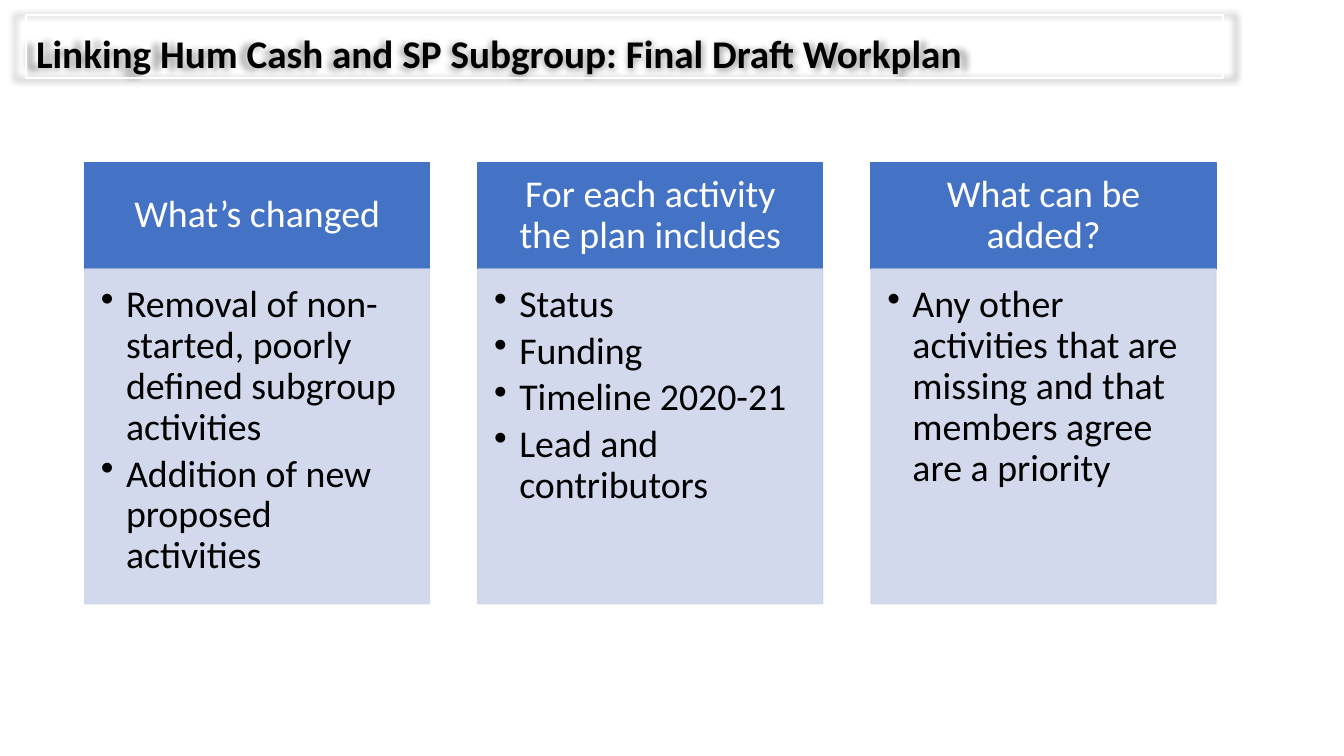
from lxml import etree
from pptx import Presentation
from pptx.dml.color import RGBColor
from pptx.enum.shapes import MSO_SHAPE
from pptx.enum.text import MSO_ANCHOR, MSO_AUTO_SIZE, PP_ALIGN
from pptx.oxml.ns import qn
from pptx.util import Inches, Pt

RECT = MSO_SHAPE.RECTANGLE
TOP, MIDDLE = MSO_ANCHOR.TOP, MSO_ANCHOR.MIDDLE
LEFT, CENTER = PP_ALIGN.LEFT, PP_ALIGN.CENTER
GROW = MSO_AUTO_SIZE.SHAPE_TO_FIT_TEXT

BLACK = RGBColor(0x00, 0x00, 0x00)
WHITE = RGBColor(0xFF, 0xFF, 0xFF)
BLUE = RGBColor(0x44, 0x72, 0xC4)
PALE = RGBColor(0xCF, 0xD5, 0xEA)

TITLE = "Linking Hum Cash and SP Subgroup: Final Draft Workplan"
COLUMNS = [
    ("What’s changed", [
        "Removal of non-started, poorly defined subgroup activities",
        "Addition of new proposed activities",
    ]),
    ("For each activity the plan includes", [
        "Status",
        "Funding",
        "Timeline 2020-21",
        "Lead and contributors",
    ]),
    ("What can be added?", [
        "Any other activities that are missing and that members agree are a priority",
    ]),
]


class Deck:
    """Holds the text style and the current slide, and draws its elements."""

    font = "Calibri"
    size = Pt(27)

    def __init__(self, slide):
        self.slide = slide

    def box(self, left, top, width, height, line, weight, fill=None):
        shape = self.slide.shapes.add_shape(
            RECT, Inches(left), Inches(top), Inches(width), Inches(height))
        shape.shadow.inherit = False
        shape.line.color.rgb = line
        shape.line.width = Pt(weight)
        if fill is None:
            shape.fill.background()
        else:
            shape.fill.solid()
            shape.fill.fore_color.rgb = fill
        return shape

    def label(self, shape, lines, color, align, anchor, insets, spacing, after=0):
        frame = shape.text_frame
        frame.word_wrap = True
        frame.vertical_anchor = anchor
        (frame.margin_left, frame.margin_top,
         frame.margin_right, frame.margin_bottom) = map(Inches, insets)
        frame.text = "\n".join(lines)
        for para in frame.paragraphs:
            para.alignment = align
            para.line_spacing = spacing
            para.space_after = Pt(after)
            para.font.name = self.font
            para.font.size = self.size
            para.font.color.rgb = color
        return frame

    def fade(self, shape, percent):
        for color in shape.element.spPr.iter(qn("a:srgbClr")):
            etree.SubElement(color, qn("a:alpha"), val=str(percent * 1000))

    def glow(self, shape):
        effects = shape.element.spPr.find(qn("a:effectLst"))
        shadow = etree.SubElement(
            effects, qn("a:outerShdw"), blurRad=str(Pt(5)),
            sx="102000", sy="102000", algn="ctr", rotWithShape="0")
        color = etree.SubElement(shadow, qn("a:srgbClr"), val=str(BLACK))
        etree.SubElement(color, qn("a:alpha"), val="40000")

    def bullet(self, para):
        para.level = 1
        props = para._p.get_or_add_pPr()
        props.set("marL", str(Inches(0.25)))
        props.set("indent", str(Inches(-0.25)))
        mark = etree.Element(qn("a:buChar"), char="•")
        props.find(qn("a:defRPr")).addprevious(mark)

    def title(self, text):
        shape = self.box(0.26, 0.15, 11.87, 0.62, WHITE, 1.5)
        self.glow(shape)
        frame = self.label(shape, [text], BLACK, LEFT, TOP,
                           (0.1, 0.05, 0.1, 0.05), 1.2)
        frame.auto_size = GROW
        font = frame.paragraphs[0].font
        font.size = Pt(28)
        font.bold = True

    def column(self, left, head, items):
        top, width, tall = 1.61, 3.42, 1.06
        shape = self.box(left, top, width, tall, BLUE, 1, BLUE)
        self.label(shape, [head], WHITE, CENTER, MIDDLE,
                   (0.21, 0.12, 0.21, 0.12), 0.9)
        body = self.box(left, top + tall, width, 3.32, PALE, 1, PALE)
        self.fade(body, 90)
        frame = self.label(body, items, BLACK, LEFT, TOP,
                           (0.16, 0.16, 0.21, 0.24), 0.9, 4)
        for para in frame.paragraphs:
            self.bullet(para)


def main():
    prs = Presentation()
    prs.slide_width = Inches(13.33)
    prs.slide_height = Inches(7.5)
    deck = Deck(prs.slides.add_slide(prs.slide_layouts[6]))
    deck.title(TITLE)
    for index, (head, items) in enumerate(COLUMNS):
        deck.column(0.84 + 3.9 * index, head, items)
    prs.save("out.pptx")


if __name__ == "__main__":
    main()
